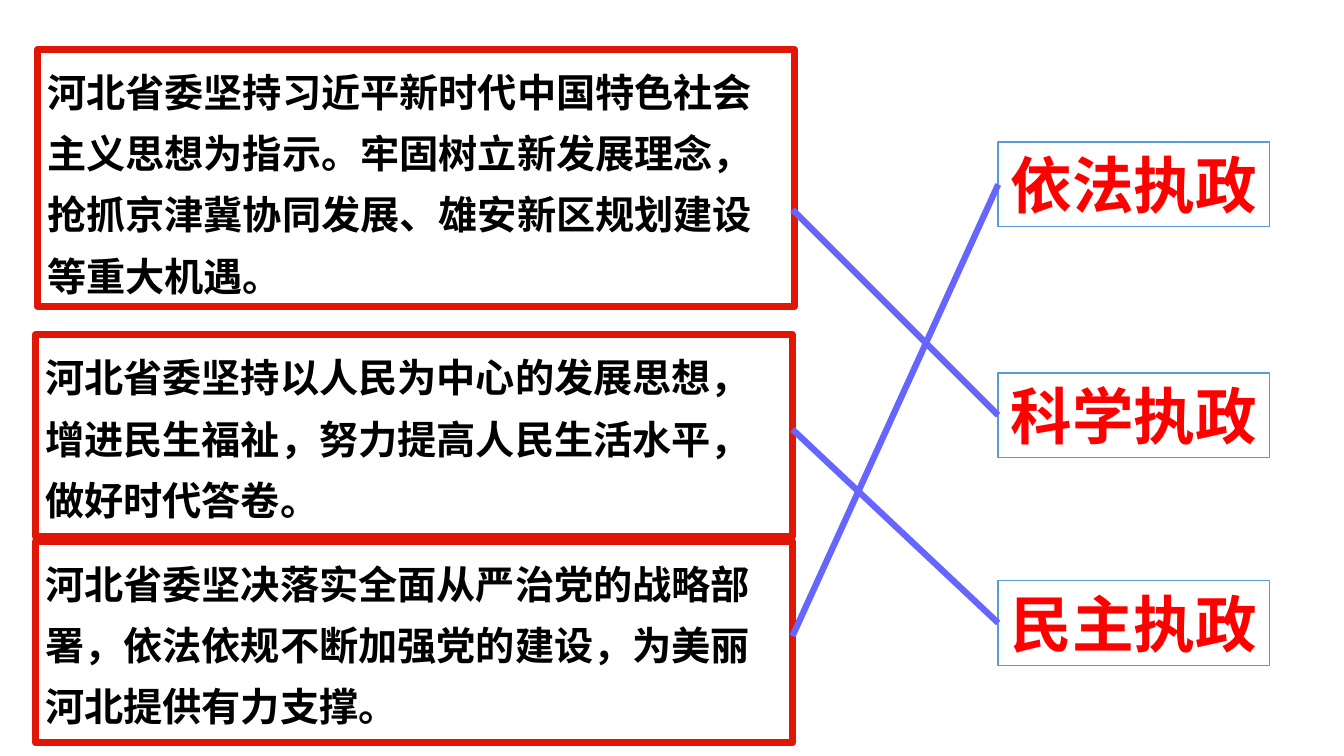
from dataclasses import dataclass

from lxml import etree
from pptx import Presentation
from pptx.dml.color import RGBColor
from pptx.enum.shapes import MSO_CONNECTOR, MSO_SHAPE
from pptx.enum.text import MSO_ANCHOR, MSO_AUTO_SIZE, PP_ALIGN
from pptx.oxml.ns import qn
from pptx.shapes.autoshape import Shape
from pptx.util import Inches, Pt

RED, BLUE, VIOLET = "E01707", "5B9BD5", "6666FF"
LABEL_LEFT, LABEL_W, LABEL_H = 9.9, 2.69, 0.84
STATEMENT_W = 7.51
LINK_LEFT = 7.86


@dataclass
class Statement:
    text: str
    left: float
    top: float
    height: float
    link_y: float
    answer: str


@dataclass
class Label:
    text: str
    top: float


STATEMENTS = [
    Statement("河北省委坚持习近平新时代中国特色社会主义思想为指示。牢固树立新发展理念，"
              "抢抓京津冀协同发展、雄安新区规划建设等重大机遇。",
              0.37, 0.49, 2.55, 2.08, "科学执政"),
    Statement("河北省委坚持以人民为中心的发展思想，增进民生福祉，努力提高人民生活水平，"
              "做好时代答卷。", 0.35, 3.32, 2, 4.26, "民主执政"),
    Statement("河北省委坚决落实全面从严治党的战略部署，依法依规不断加强党的建设，"
              "为美丽河北提供有力支撑。", 0.35, 5.37, 2, 6.31, "依法执政"),
]
LABELS = [Label("依法执政", 1.41), Label("科学执政", 3.7), Label("民主执政", 5.76)]


def rgb(color: str) -> RGBColor:
    return RGBColor.from_string(color)


def add_box(shapes, left: float, top: float, width: float, height: float,
            color: str, weight: float) -> Shape:
    sp = shapes.add_shape(MSO_SHAPE.RECTANGLE, Inches(left), Inches(top),
                          Inches(width), Inches(height))
    sp.shadow.inherit = False
    sp.fill.background()
    sp.line.color.rgb = rgb(color)
    sp.line.width = Pt(weight)
    return sp


def write(sp: Shape, text: str, *, size: float, font: str, color: str,
          align: PP_ALIGN = PP_ALIGN.LEFT, spacing: float = 1.0) -> None:
    tf = sp.text_frame
    tf.word_wrap = True
    tf.auto_size = MSO_AUTO_SIZE.NONE
    tf.vertical_anchor = MSO_ANCHOR.TOP
    p = tf.paragraphs[0]
    p.alignment = align
    p.line_spacing = spacing
    r = p.add_run()
    r.text = text
    r.font.size = Pt(size)
    r.font.bold = True
    r.font.name = font
    r.font.color.rgb = rgb(color)
    east_asian = etree.SubElement(r.font._element, qn("a:ea"))
    east_asian.set("typeface", font)


def add_link(shapes, y: float, label: Shape) -> None:
    """Draw a line from a statement's right edge to the label's left side."""
    line = shapes.add_connector(MSO_CONNECTOR.STRAIGHT, Inches(LINK_LEFT), Inches(y),
                                label.left, label.top + label.height // 2)
    line.end_connect(label, 1)
    line.line.color.rgb = rgb(VIOLET)
    line.line.width = Pt(4.5)
    etree.SubElement(line._element.spPr, qn("a:effectLst"))


def main() -> None:
    prs = Presentation()
    prs.slide_width, prs.slide_height = Inches(13.33), Inches(7.5)
    shapes = prs.slides.add_slide(prs.slide_layouts[6]).shapes

    for s in STATEMENTS:
        sp = add_box(shapes, s.left, s.top, STATEMENT_W, s.height, RED, 5)
        write(sp, s.text, size=28, font="Noto Sans CJK SC", color="000000", spacing=1.3)

    labels = {}
    for label in LABELS:
        sp = add_box(shapes, LABEL_LEFT, label.top, LABEL_W, LABEL_H, BLUE, 1)
        write(sp, label.text, size=44, font="Noto Sans CJK JP", color="FF0000",
              align=PP_ALIGN.CENTER)
        labels[label.text] = sp

    for s in STATEMENTS:
        add_link(shapes, s.link_y, labels[s.answer])

    prs.save("out.pptx")


if __name__ == "__main__":
    main()
